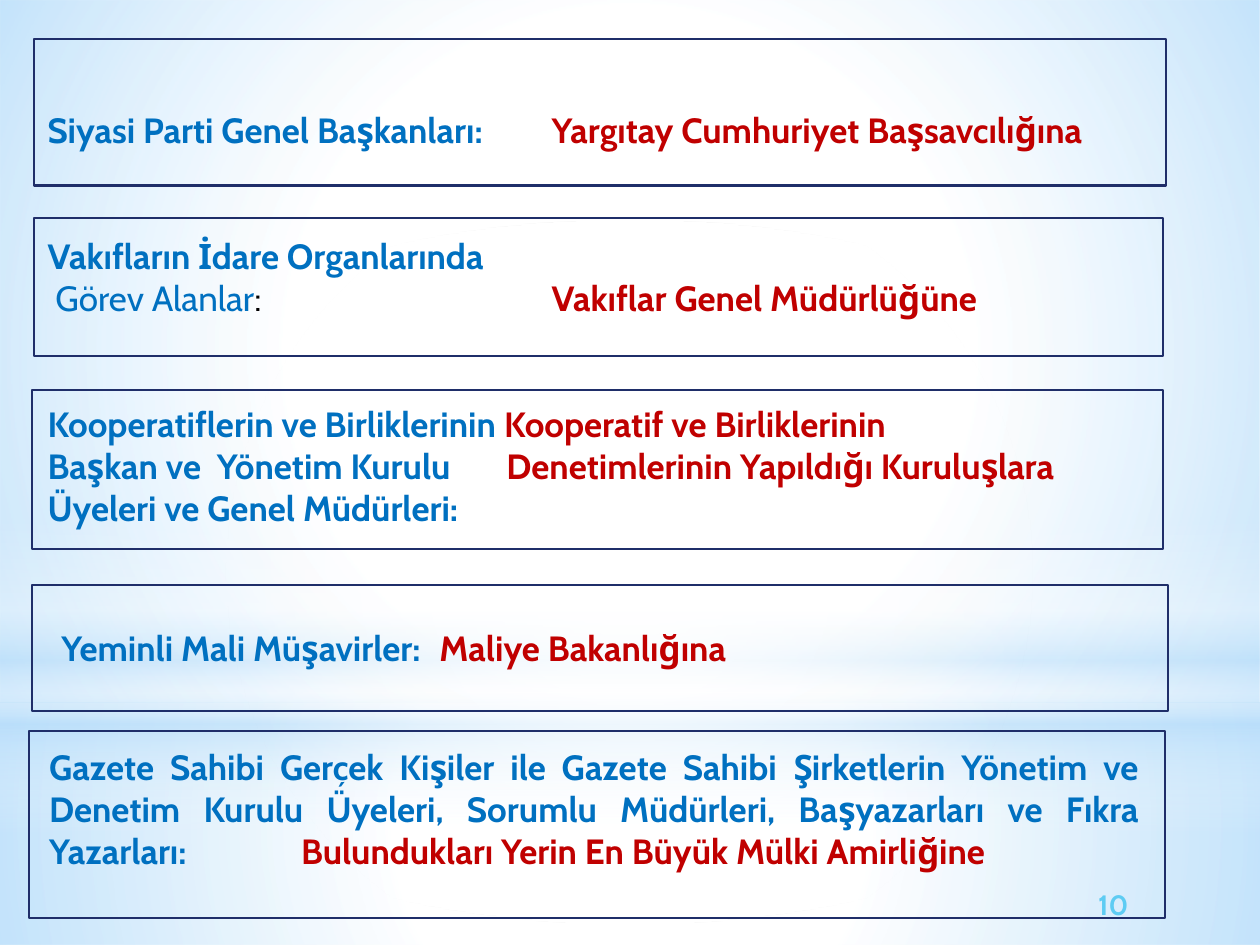
from dataclasses import dataclass

from lxml import etree
from pptx import Presentation
from pptx.dml.color import RGBColor
from pptx.enum.shapes import MSO_SHAPE
from pptx.enum.text import MSO_ANCHOR, PP_ALIGN
from pptx.oxml import parse_xml
from pptx.oxml.ns import nsdecls, qn
from pptx.util import Cm, Pt

RECT, OVAL = MSO_SHAPE.RECTANGLE, MSO_SHAPE.OVAL
LEFT, FULL = PP_ALIGN.LEFT, PP_ALIGN.JUSTIFY
TOP, MIDDLE = MSO_ANCHOR.TOP, MSO_ANCHOR.MIDDLE


@dataclass(frozen=True)
class Theme:
    font: str = "Cabin"
    size: int = 20
    small: int = 16
    edge: float = 1.25
    gap: int = 48
    blue: str = "0070C0"
    red: str = "C00000"
    black: str = "000000"
    navy: str = "1F2E69"
    cyan: str = "5ECCF3"
    white: str = "FFFFFF"
    sky: str = "B4DCFA"


T = Theme()


@dataclass(frozen=True)
class Box:
    left: float
    top: float
    width: float
    height: float

    def place(self) -> tuple:
        return Cm(self.left), Cm(self.top), Cm(self.width), Cm(self.height)


@dataclass(frozen=True)
class Glow:
    box: Box
    stops: tuple  # (position %, colour, opacity %)
    form: int = RECT
    round: bool = True


@dataclass(frozen=True)
class Run:
    text: str
    tint: str
    bold: bool = True


@dataclass(frozen=True)
class Line:
    runs: tuple
    tab: float = 0
    before: int = 0
    align: int = LEFT
    size: int = T.size


GLOWS = (
    Glow(Box(0, 14.17, 25.4, 4.88),
         ((0, T.white, 91), (37, T.white, 76), (100, T.sky, 79))),
    Glow(Box(0, 0, 25.4, 14.17),
         ((0, T.white, 89), (48, T.white, 62), (100, T.sky, 79))),
    Glow(Box(0, 10.46, 25.4, 6.35),
         ((0, T.white, 0), (29, T.white, 30), (45, T.sky, 40),
          (55, T.white, 26), (65, T.sky, 60), (100, T.white, 0)), round=False),
    Glow(Box(0, 4.45, 25.4, 14.17),
         ((0, T.white, 100), (56, T.white, 0)), OVAL),
)

FRAMES = (
    Box(0.69, 0.79, 22.81, 2.95),
    Box(0.69, 4.39, 22.76, 2.79),
    Box(0.64, 7.87, 22.81, 3.2),
    Box(0.64, 11.79, 22.91, 2.54),
    Box(0.58, 14.73, 22.91, 3.78),
)

BODY = (
    Line((Run("Siyasi Parti Genel Başkanları:", T.blue),
          Run("\tYargıtay Cumhuriyet Başsavcılığına", T.red)), tab=10.16),
    Line((Run("Vakıfların İdare Organlarında", T.blue),), before=T.gap),
    Line((Run(" Görev Alanlar", T.blue, False), Run(":", T.black, False),
          Run("\tVakıflar Genel Müdürlüğüne", T.red)), tab=10.16),
    Line((Run("Kooperatiflerin ve Birliklerinin ", T.blue),
          Run("Kooperatif ve Birliklerinin", T.red)), before=T.gap),
    Line((Run("Başkan ve  Yönetim Kurulu", T.blue),
          Run("\tDenetimlerinin Yapıldığı Kuruluşlara", T.red)), tab=9.25),
    Line((Run("Üyeleri ve Genel Müdürleri:", T.blue),)),
)
SWORN = (
    Line((Run("Yeminli Mali Müşavirler:", T.blue),
          Run("\tMaliye Bakanlığına", T.red)), tab=7.62),
)
PRESS = (
    Line((Run("Gazete Sahibi Gerçek Kişiler ile Gazete Sahibi Şirketlerin "
              "Yönetim ve Denetim Kurulu Üyeleri, Sorumlu Müdürleri, "
              "Başyazarları ve Fıkra Yazarları:", T.blue),
          Run("\tBulundukları Yerin En Büyük Mülki Amirliğine", T.red)),
         tab=5.08, align=FULL),
)
PAGE = (Line((Run("10", T.cyan),), size=T.small),)


def add_glow(slide, glow: Glow) -> None:
    shape = slide.shapes.add_shape(glow.form, *glow.box.place())
    shape.shadow.inherit = False
    shape.line.fill.background()
    shape.fill.background()
    stops = "".join(
        f'<a:gs pos="{pos * 1000}"><a:srgbClr val="{tint}">'
        f'<a:alpha val="{alpha * 1000}"/></a:srgbClr></a:gs>'
        for pos, tint, alpha in glow.stops)
    if glow.round:
        way = ('<a:path path="circle"><a:fillToRect l="50000" t="50000" '
               'r="50000" b="50000"/></a:path>')
    else:
        way = '<a:lin ang="5400000" scaled="0"/>'
    fill = parse_xml(f'<a:gradFill {nsdecls("a")} rotWithShape="1">'
                     f'<a:gsLst>{stops}</a:gsLst>{way}</a:gradFill>')
    props = shape._element.spPr
    props.replace(props.find(qn("a:noFill")), fill)


def add_frame(slide, box: Box) -> None:
    shape = slide.shapes.add_shape(RECT, *box.place())
    shape.shadow.inherit = False
    shape.fill.background()
    shape.line.color.rgb = RGBColor.from_string(T.navy)
    shape.line.width = Pt(T.edge)


def add_text(slide, box: Box, lines: tuple, anchor: int = TOP) -> None:
    frame = slide.shapes.add_textbox(*box.place()).text_frame
    frame.word_wrap = True
    frame.vertical_anchor = anchor
    for i, line in enumerate(lines):
        para = frame.paragraphs[0] if i == 0 else frame.add_paragraph()
        para.alignment = line.align
        if line.before:
            para.space_before = Pt(line.before)
        if line.tab:
            tabs = etree.SubElement(para._p.get_or_add_pPr(), qn("a:tabLst"))
            etree.SubElement(tabs, qn("a:tab"), pos=str(Cm(line.tab)), algn="l")
        para.font.name = T.font
        para.font.size = Pt(line.size)
        para.font.bold = True
        for part in line.runs:
            run = para.add_run()
            run.text = part.text
            run.font.color.rgb = RGBColor.from_string(part.tint)
            if not part.bold:
                run.font.bold = False


def main() -> None:
    deck = Presentation()
    deck.slide_width, deck.slide_height = Cm(25.4), Cm(19.05)
    slide = deck.slides.add_slide(deck.slide_layouts[6])

    # Backdrop
    for glow in GLOWS:
        add_glow(slide, glow)

    # Page number and wording
    add_text(slide, Box(21.89, 17.73, 3.23, 1.02), PAGE, MIDDLE)
    add_text(slide, Box(0.71, 2.06, 24, 11.38), BODY)
    add_text(slide, Box(0.99, 12.5, 22.2, 1.12), SWORN)
    add_text(slide, Box(0.74, 14.91, 22.48, 3.68), PRESS)

    # Outlines around each group
    for box in FRAMES:
        add_frame(slide, box)

    deck.save("out.pptx")


if __name__ == "__main__":
    main()
